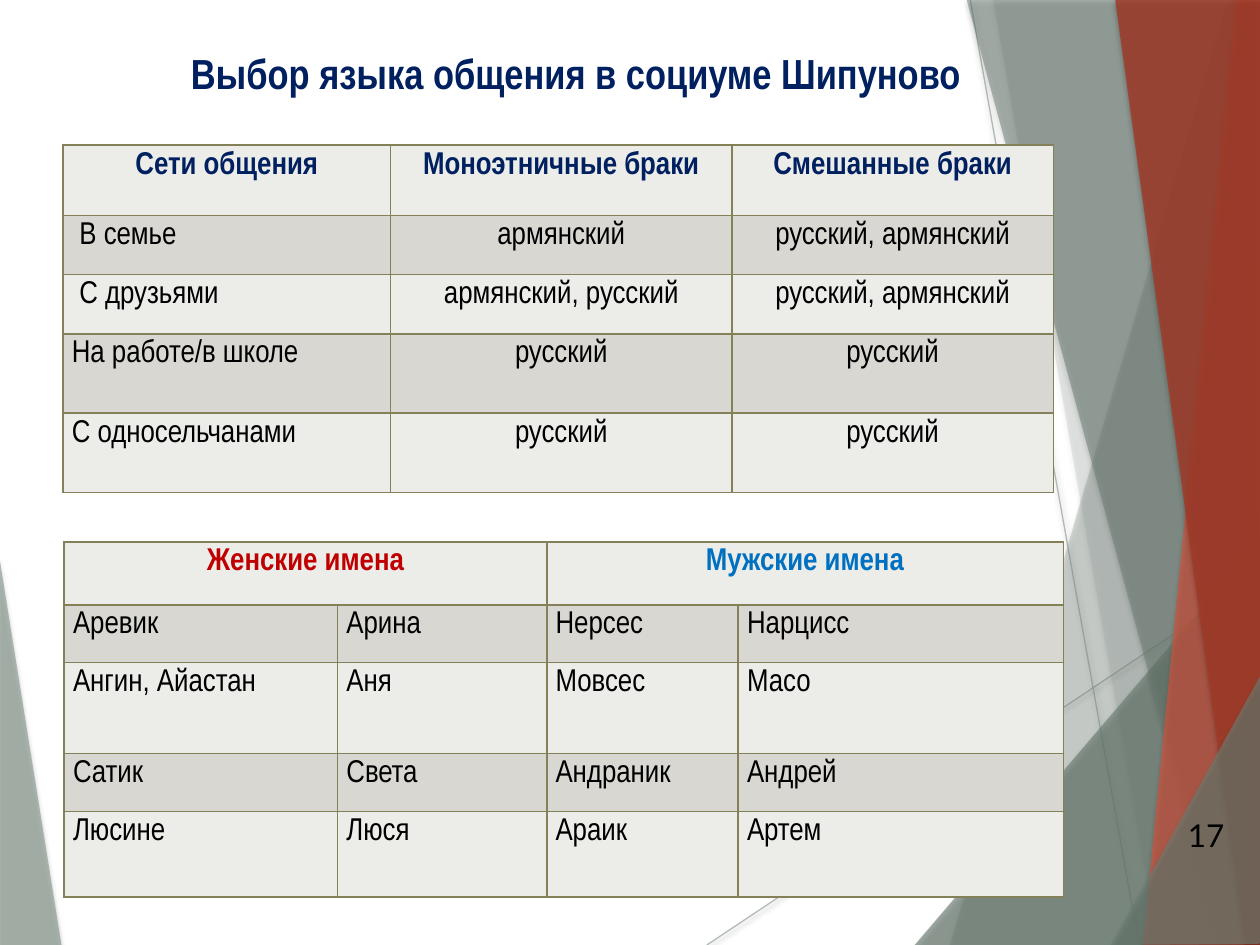
from lxml import etree
from pptx import Presentation, util as u
from pptx.dml.color import RGBColor as Rgb
from pptx.enum import shapes, text
from pptx.oxml import parse_xml
from pptx.oxml.ns import nsdecls, qn

look = dict(
    sage="93A299", moss="6B7D72", coral="CF543F", rust="A23A28",
    navy="002060", black="000000", red="C00000", blue="0070C0",
    edge="848058", bands=("ECECE9", "D8D7D1"),
    face="Arial Narrow", plain="Lato", head=24, body=18, rule=0.96, thin=0.75,
)

deck = Presentation()
deck.slide_width, deck.slide_height = u.Inches(10), u.Inches(7.5)
unit = deck.slide_width // 1000
slide = deck.slides.add_slide(deck.slide_layouts[5])
tree = slide.shapes


def write(frame, words, color="black", size="body", face="face", bold=False,
          align=text.PP_ALIGN.LEFT, after=0):
    para = frame.paragraphs[0]
    para.alignment = align
    para.space_after = u.Pt(after)
    run = para.add_run()
    run.text = words
    font = run.font
    font.name, font.size, font.bold = look[face], u.Pt(look[size]), bold
    font.color.rgb = Rgb.from_string(look[color])


def glaze(shape, alpha, shade, blur, drop):
    props = shape._element.spPr
    tint = next(props.iter(qn("a:srgbClr")))
    etree.SubElement(tint, qn("a:alpha"), val=str(alpha * 1000))
    for old in props.findall(qn("a:effectLst")):
        props.remove(old)
    props.append(parse_xml(
        f'<a:effectLst {nsdecls("a")}><a:outerShdw blurRad="{u.Pt(blur)}" '
        f'dist="{u.Pt(drop)}" dir="5400000" rotWithShape="0"><a:srgbClr val="000000">'
        f'<a:alpha val="{shade * 1000}"/></a:srgbClr></a:outerShdw></a:effectLst>'))


left = [("sage", 70, [(-1, 439), (49, 751), (-1, 750)])]
right = [
    ("sage", 36, [(975, 0), (754, 750), (1002, 751), (1001, 1)]),
    ("sage", 20, [(788, -1), (919, 750), (1001, 750), (1001, -1)]),
    ("moss", 66, [(726, 750), (1000, 429), (1001, 750)]),
    ("moss", 50, [(767, -1), (970, 750), (1001, 749), (1001, -1)]),
    ("coral", 70, [(981, -1), (907, 750), (1001, 750), (1000, -1)]),
    ("rust", 82, [(885, -1), (988, 750), (1002, 750), (1000, -1)]),
    ("moss", 66, [(882, 750), (1001, 535), (1002, 749)]),
]
rays = [("sage", 70, [(561, 750), (1001, 457)]), ("sage", 70, [(770, 0), (904, 750)])]

for hue, alpha, dots in left + rays + right:
    color = Rgb.from_string(look[hue])
    if len(dots) == 2:
        ends = [unit * n for dot in dots for n in dot]
        ray = tree.add_connector(shapes.MSO_CONNECTOR.STRAIGHT, *ends)
        ray.line.color.rgb = color
        ray.line.width = u.Pt(look["thin"])
        glaze(ray, alpha, 38, 3.1, 1.6)
    else:
        pen = tree.build_freeform(*dots[0], scale=unit)
        pen.add_line_segments(dots[1:], close=True)
        shard = pen.convert_to_shape()
        shard.fill.solid()
        shard.fill.fore_color.rgb = color
        shard.line.fill.background()
        glaze(shard, alpha, 35, 3, 2)

title = tree.title
title.left, title.top, title.width, title.height = [unit * n for n in (31, 33, 852, 82)]
title.text_frame.vertical_anchor = text.MSO_ANCHOR.TOP
title.text_frame.word_wrap = True
write(title.text_frame, "Выбор языка общения в социуме Шипуново", color="navy",
      size="head", bold=True, align=text.PP_ALIGN.CENTER)
tree._spTree.append(title._element)

nets = [
    ["Сети общения", "Моноэтничные браки", "Смешанные браки"],
    ["В семье", "армянский", "русский, армянский"],
    ["С друзьями", "армянский, русский", "русский, армянский"],
    ["На работе/в школе", "русский", "русский"],
    ["С односельчанами", "русский", "русский"],
]
names = [
    ["Женские имена", "", "Мужские имена", ""],
    ["Аревик", "Арина", "Нерсес", "Нарцисс"],
    ["Ангин, Айастан", "Аня", "Мовсес", "Масо"],
    ["Сатик", "Света", "Андраник", "Андрей"],
    ["Люсине", "Люся", "Араик", "Артем"],
]
grids = [
    (nets, 50, 115, [260, 271, 255], [56, 47, 47, 63, 63], ["navy"] * 3, True, 10),
    (names, 51, 430, [217, 166, 152, 258], [50, 46, 72, 46, 68],
     ["red", "red", "blue", "blue"], False, 0),
]

for data, x, y, cols, rows, heads, mid, after in grids:
    table = tree.add_table(len(rows), len(cols), unit * x, unit * y,
                           unit * sum(cols), unit * sum(rows)).table
    for col, wide in zip(table.columns, cols):
        col.width = unit * wide
    for row, tall in zip(table.rows, rows):
        row.height = unit * tall
    for r, line in enumerate(data):
        for c, words in enumerate(line):
            cell = table.cell(r, c)
            cell.margin_left = cell.margin_right = unit * 7
            cell.margin_top = cell.margin_bottom = unit * 5
            cell.fill.solid()
            cell.fill.fore_color.rgb = Rgb.from_string(look["bands"][r % 2])
            for i, side in enumerate(("lnL", "lnR", "lnT", "lnB")):
                cell._tc.get_or_add_tcPr().insert(i, parse_xml(
                    f'<a:{side} {nsdecls("a")} w="{u.Pt(look["rule"])}"><a:solidFill>'
                    f'<a:srgbClr val="{look["edge"]}"/></a:solidFill></a:{side}>'))
            if not words:
                table.cell(r, c - 1).merge(cell)
                continue
            if mid and c == 0 and r in (1, 2):
                cell.margin_left = unit * 13
            center = r == 0 or (mid and c > 0)
            write(cell.text_frame, words, color=heads[c] if r == 0 else "black",
                  bold=r == 0, after=after if r else 0,
                  align=text.PP_ALIGN.CENTER if center else text.PP_ALIGN.LEFT)

page = tree.add_textbox(*[unit * n for n in (933, 643, 67, 40)])
page.text_frame.word_wrap = True
write(page.text_frame, "17", face="plain")

deck.save("out.pptx")
